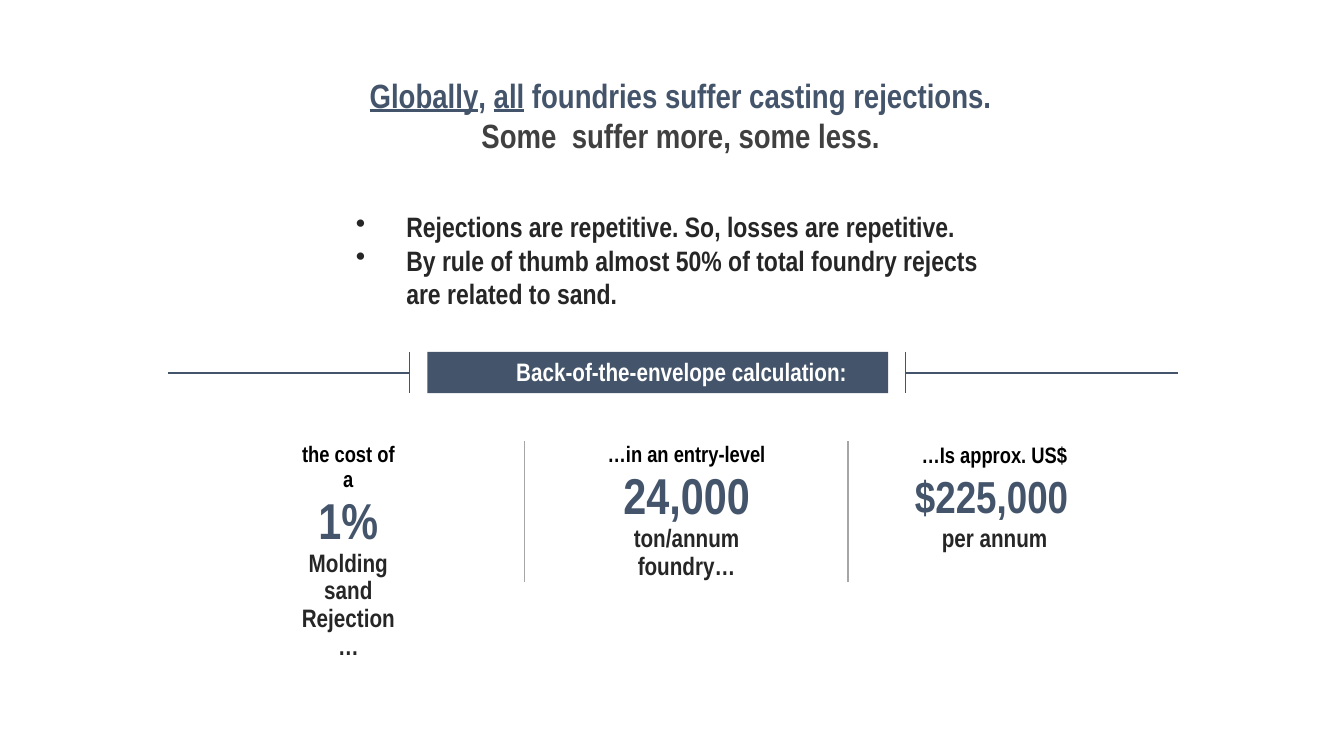
from pptx import Presentation
from pptx.dml.color import RGBColor
from pptx.enum.shapes import MSO_CONNECTOR, MSO_SHAPE
from pptx.enum.text import MSO_ANCHOR, PP_ALIGN
from pptx.oxml.ns import qn
from pptx.util import Inches, Pt
from lxml import etree

CENTER, LEFT = PP_ALIGN.CENTER, PP_ALIGN.LEFT
TOP = MSO_ANCHOR.TOP
RECTANGLE = MSO_SHAPE.RECTANGLE
STRAIGHT = MSO_CONNECTOR.STRAIGHT

SLATE, CHARCOAL, INK = "44546A", "404040", "262626"
BLACK, WHITE, GRAY = "000000", "FFFFFF", "A6A6A6"


def color(value):
    return RGBColor.from_string(value)


class SlideBuilder:
    font_name = "Arial Narrow"

    def __init__(self, page):
        self.page = page

    def line(self, x1, y1, x2, y2, stroke):
        connector = self.page.shapes.add_connector(
            STRAIGHT, Inches(x1), Inches(y1), Inches(x2), Inches(y2))
        connector.line.color.rgb = color(stroke)
        connector.line.width = Pt(1)
        etree.SubElement(connector._element.spPr, qn("a:effectLst"))

    def text(self, left, top, width, height, paragraphs):
        box = self.page.shapes.add_textbox(
            Inches(left), Inches(top), Inches(width), Inches(height))
        self.fill_text(box.text_frame, paragraphs)

    def banner(self, left, top, width, height, fill, paragraphs):
        box = self.page.shapes.add_shape(
            RECTANGLE, Inches(left), Inches(top), Inches(width), Inches(height))
        box.shadow.inherit = False
        box.fill.solid()
        box.fill.fore_color.rgb = color(fill)
        box.line.fill.background()
        self.fill_text(box.text_frame, paragraphs, 0.05)

    def fill_text(self, frame, paragraphs, inset=0):
        settings = {"word_wrap": True, "vertical_anchor": TOP,
                    "margin_left": 0, "margin_right": 0,
                    "margin_top": Inches(inset), "margin_bottom": Inches(inset)}
        for name, value in settings.items():
            setattr(frame, name, value)
        for index, (spans, size, shade, layout) in enumerate(paragraphs):
            para = frame.add_paragraph() if index else frame.paragraphs[0]
            self.paragraph(para, spans, size, shade, **layout)

    def paragraph(self, para, spans, size, shade, align=CENTER, spacing=None,
                  before=None, indent=0, bullet=False):
        properties = para._p.get_or_add_pPr()
        properties.set("marL", str(Inches(indent)))
        properties.set("indent", str(Inches(-0.5) if bullet else 0))
        if bullet:
            etree.SubElement(properties, qn("a:buChar"), char="•")
        para.alignment = align
        if spacing:
            para.line_spacing = Pt(spacing)
        if before:
            para.space_before = Pt(before)
        for words, underline in spans:
            span = para.add_run()
            span.text = words
            style = {"name": self.font_name, "size": Pt(size),
                     "bold": True, "underline": underline}
            for name, value in style.items():
                setattr(span.font, name, value)
            span.font.color.rgb = color(shade)


def plain(words):
    return [(words, False)]


def main():
    deck = Presentation()
    deck.slide_width, deck.slide_height = Inches(13.33), Inches(7.5)
    builder = SlideBuilder(deck.slides.add_slide(deck.slide_layouts[6]))

    heading = {"spacing": 28.4, "indent": 0.1}
    point = {"align": LEFT, "indent": 0.51, "bullet": True}
    builder.text(3.52, 0.75, 6.36, 2.36, [
        ([("Globally", True), (", ", False), ("all", True),
          (" foundries suffer casting rejections.", False)], 24, SLATE, heading),
        (plain("Some  suffer more, some less."), 24, CHARCOAL, heading),
        (plain("Rejections are repetitive. So, losses are repetitive."),
         20, INK, {**point, "before": 39}),
        (plain("By rule of thumb almost 50% of total foundry rejects "
               "are related to sand."), 20, INK, point),
    ])

    builder.banner(4.24, 3.49, 4.57, 0.41, SLATE, [
        (plain("Back-of-the-envelope calculation:"), 18, WHITE,
         {"align": LEFT, "indent": 0.88}),
    ])
    for outer, inner in ((1.67, 4.06), (11.68, 8.98)):
        builder.line(outer, 3.7, inner, 3.7, SLATE)
        builder.line(inner, 3.49, inner, 3.9, SLATE)

    figures = [
        (2.93, 1.05, 1.67,
         ("the cost of a", 16, {"spacing": 18.1}),
         ("1%", 36, {"spacing": 40.8}),
         ("Molding sand Rejection …", 18, {"spacing": 19.9})),
        (5.88, 1.86, 1.12,
         ("…in an entry-level", 16, {"spacing": 18.5}),
         ("24,000", 36, {"spacing": 40.8}),
         ("ton/annum foundry…", 18, {"spacing": 19.9})),
        (9.01, 1.65, 1.11,
         ("…Is approx. US$", 16, {"align": LEFT, "indent": 0.13}),
         ("$225,000", 32, {"spacing": 38.1, "before": 0.3}),
         ("per annum", 18, {"spacing": 21.4, "indent": 0.06})),
    ]
    for left, width, height, *rows in figures:
        builder.text(left, 4.38, width, height, [
            (plain(words), size, shade, layout)
            for (words, size, layout), shade in zip(rows, (BLACK, SLATE, INK))])
    for x in (5.2, 8.41):
        builder.line(x, 4.38, x, 5.77, GRAY)

    deck.save("out.pptx")


if __name__ == "__main__":
    main()
